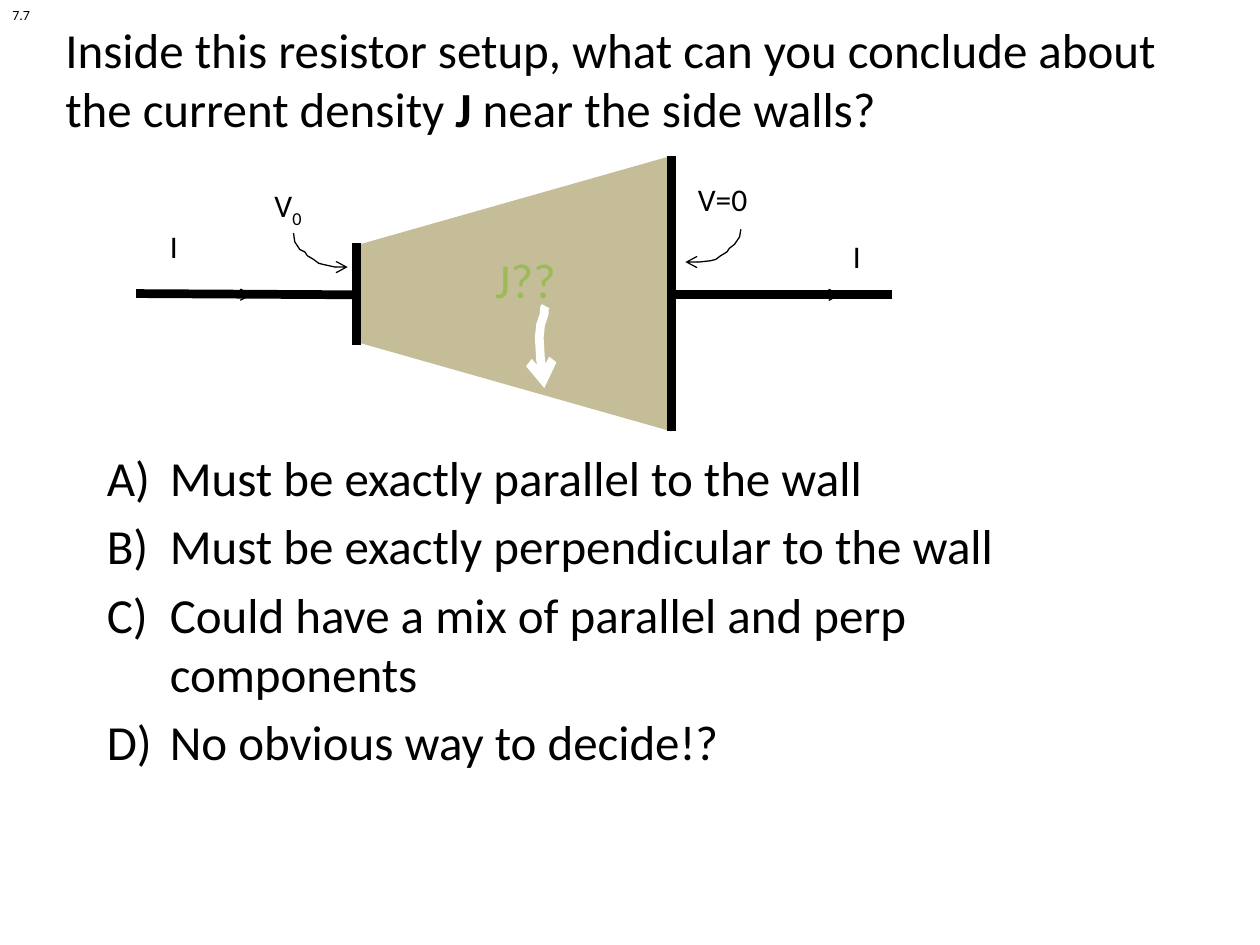
from lxml.etree import SubElement
from pptx import Presentation
from pptx.dml.color import RGBColor
from pptx.enum.shapes import MSO_CONNECTOR as Connector, MSO_SHAPE as Shape
from pptx.enum.text import MSO_ANCHOR as Anchor
from pptx.oxml.ns import qn
from pptx.util import Inches, Pt

BLACK, WHITE, TAN, GREEN = "000000", "FFFFFF", "C4BD97", "9BBB59"

QUESTION = [
    ("Inside this resistor setup, what can you conclude about the current density ", {}),
    ("J", {"bold": True}),
    (" near the side walls?", {}),
]
ANSWERS = [
    "Must be exactly parallel to the wall",
    "Must be exactly perpendicular to the wall",
    "Could have a mix of parallel and perp components",
    "No obvious way to decide!?",
]
LABELS = [
    ([("I", {})], (1.25, 1.75, 0.27, 0.4), 18, BLACK),
    ([("I", {})], (6.67, 1.83, 0.27, 0.4), 18, BLACK),
    ([("J??", {})], (3.83, 1.93, 0.84, 0.57), 28, GREEN),
    ([("V", {}), ("0", {"baseline": -25000})], (2.08, 1.43, 0.48, 0.4), 18, BLACK),
    ([("V=0", {})], (5.44, 1.38, 0.75, 0.4), 18, BLACK),
    ([("7.7", {})], (0, 0, 0.34, 0.24), 8, BLACK),
]
WIRES = [((2.83, 2.34), (1.08, 2.33)), ((7.08, 2.34), (5.33, 2.34))]
CURRENTS = [((1.17, 2.33), (2, 2.34)), ((5.83, 2.34), (6.67, 2.34))]
PLATES = [((2.83, 1.93), (2.83, 2.74)), ((5.33, 1.24), (5.33, 3.42))]
DENSITY_ARROW = [(433, 243), (432, 245), (432, 249), (429, 258), (428, 268), (429, 285),
                 (430, 289), (431, 297), (432, 304), (432, 308)]
POINTERS = [
    [(588, 182), (587, 188), (583, 194), (579, 197), (577, 200), (572, 203),
     (568, 206), (564, 207), (555, 208), (544, 208)],
    [(233, 185), (234, 192), (238, 198), (242, 200), (244, 203), (249, 206),
     (253, 209), (257, 210), (266, 212), (276, 212)],
]


def color(value):
    return RGBColor.from_string(value)


def style_line(shape, value, width, arrow=False):
    shape.line.color.rgb = color(value)
    shape.line.width = Pt(width)
    if arrow:
        SubElement(shape.line._get_or_add_ln(), qn("a:tailEnd"), type="arrow")


def add_line(slide, start, end, width, arrow=False):
    line = slide.shapes.add_connector(
        Connector.STRAIGHT, *(Inches(value) for value in start + end))
    style_line(line, BLACK, width, arrow)
    SubElement(line._element.spPr, qn("a:effectLst"))


def add_curve(slide, points, value, width):
    """Draw an arrow through points given in hundredths of an inch."""
    builder = slide.shapes.build_freeform(*points[0], scale=Inches(0.01))
    builder.add_line_segments(points[1:], close=False)
    curve = builder.convert_to_shape()
    curve.shadow.inherit = False
    curve.fill.background()
    style_line(curve, value, width, arrow=True)


def add_text(slide, paragraphs, box, size, value=BLACK, wrap=False):
    frame = slide.shapes.add_textbox(*(Inches(length) for length in box)).text_frame
    frame.word_wrap = wrap
    for index, runs in enumerate(paragraphs):
        paragraph = frame.add_paragraph() if index else frame.paragraphs[0]
        paragraph.font.name = "Calibri"
        paragraph.font.size = Pt(size)
        paragraph.font.color.rgb = color(value)
        for text, options in runs:
            run = paragraph.add_run()
            run.text = text
            run.font.name = "Calibri"
            run.font.size = Pt(size)
            run.font.color.rgb = color(value)
            run.font.bold = options.get("bold")
            if "baseline" in options:
                run._r.get_or_add_rPr().set("baseline", str(options["baseline"]))
    return frame


def add_answers(slide):
    paragraphs = [[(answer, {})] for answer in ANSWERS]
    frame = add_text(slide, paragraphs, (0.75, 3.5, 8.5, 4.5), 28, wrap=True)
    for paragraph in frame.paragraphs:
        paragraph.space_before = Pt(5.6)
        properties = paragraph._p.get_or_add_pPr()
        properties.set("marL", str(Inches(0.5)))
        properties.set("indent", str(-Inches(0.5)))
        numbering = SubElement(properties, qn("a:buAutoNum"), type="alphaUcParenR")
        properties.find(qn("a:spcBef")).addnext(numbering)


def add_resistor(slide):
    resistor = slide.shapes.add_shape(
        Shape.TRAPEZOID, Inches(2.99), Inches(1.08), Inches(2.19), Inches(2.5))
    resistor.rotation = 270
    resistor.adjustments[0] = 0.324
    resistor.shadow.inherit = False
    resistor.fill.solid()
    resistor.fill.fore_color.rgb = color(TAN)
    resistor.line.fill.background()


def main():
    presentation = Presentation()
    presentation.slide_width, presentation.slide_height = Inches(10), Inches(7.5)
    slide = presentation.slides.add_slide(presentation.slide_layouts[6])
    title = add_text(slide, [QUESTION], (0.42, 0, 9.25, 1.25), 28, wrap=True)
    title.vertical_anchor = Anchor.MIDDLE
    add_answers(slide)
    add_resistor(slide)
    for start, end in WIRES + PLATES:
        add_line(slide, start, end, 5)
    for start, end in CURRENTS:
        add_line(slide, start, end, 0.75, arrow=True)
    for runs, box, size, value in LABELS:
        add_text(slide, [runs], box, size, value)
    add_curve(slide, DENSITY_ARROW, WHITE, 5)
    for points in POINTERS:
        add_curve(slide, points, BLACK, 0.75)
    presentation.save("out.pptx")


if __name__ == "__main__":
    main()
